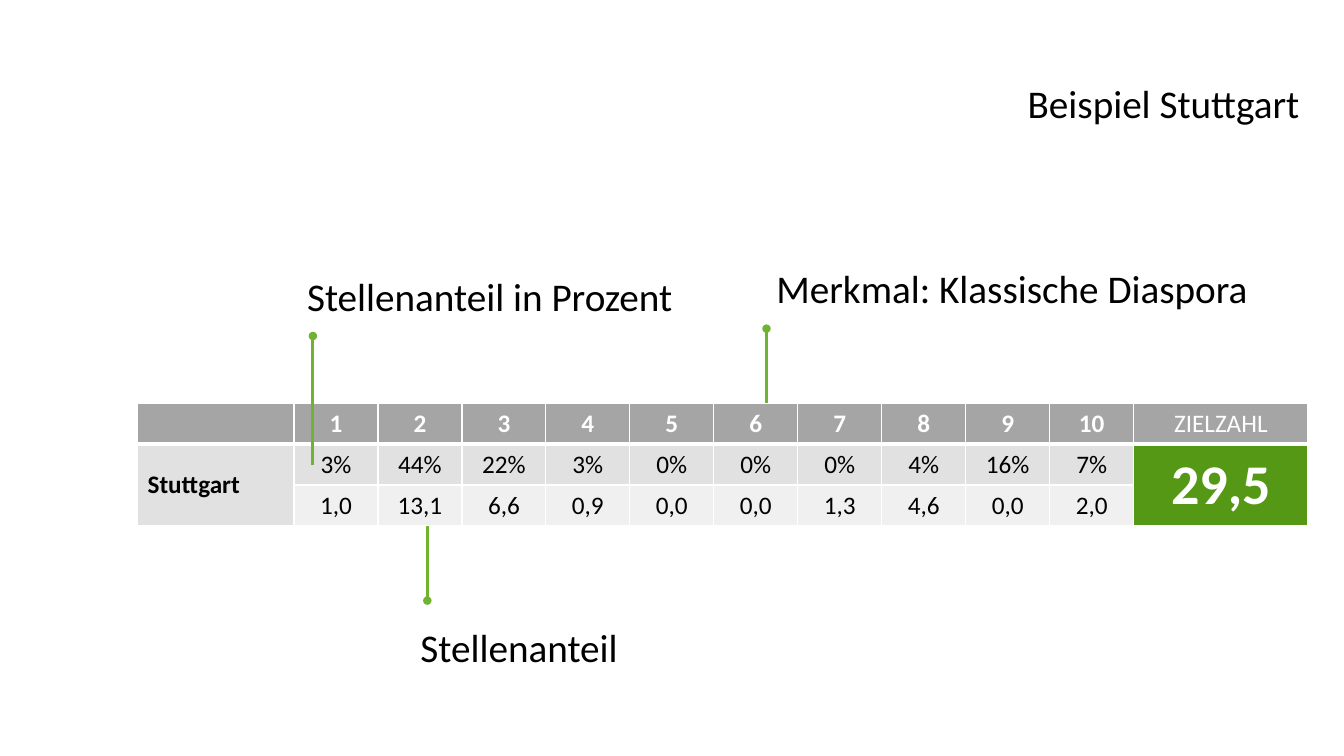
from lxml import etree
from pptx import Presentation
from pptx.dml.color import RGBColor
from pptx.enum.shapes import MSO_CONNECTOR
from pptx.enum.text import MSO_ANCHOR, PP_ALIGN
from pptx.oxml.ns import qn
from pptx.util import Pt

STRAIGHT = MSO_CONNECTOR.STRAIGHT
TOP, MIDDLE = MSO_ANCHOR.TOP, MSO_ANCHOR.MIDDLE
LEFT, CENTER, RIGHT = PP_ALIGN.LEFT, PP_ALIGN.CENTER, PP_ALIGN.RIGHT
TITLE_ONLY = 5
EMU_PER_PX = 9525
COLORS = {
    "text": "000000",
    "white": "FFFFFF",
    "header": "A5A5A5",
    "percent": "E1E1E1",
    "share": "F0F0F0",
    "target": "559815",
    "pointer": "70B231",
}
FEATURES = [str(number) for number in range(1, 11)]
PERCENTS = ["3%", "44%", "22%", "3%", "0%", "0%", "0%", "4%", "16%", "7%"]
SHARES = ["1,0", "13,1", "6,6", "0,9", "0,0", "0,0", "1,3", "4,6", "0,0", "2,0"]
LABELS = [
    ("Stellenanteil", 391, 583, 597),
    ("Stellenanteil in Prozent", 283, 249, 597),
    ("Merkmal: Klassische Diaspora", 730, 241, 538),
]
POINTERS = [(298, 443, 320), (407, 501, 572), (730, 384, 313)]


def px(*lengths):
    """Turn pixel lengths into EMU."""
    return [length * EMU_PER_PX for length in lengths]


def rgb(name):
    """Look up a named colour."""
    return RGBColor.from_string(COLORS[name])


def write(frame, text, size=18, color="text", bold=False, align=LEFT,
          anchor=TOP, spacing=None):
    """Put one formatted paragraph into a text frame."""
    frame.word_wrap = True
    frame.vertical_anchor = anchor
    paragraph = frame.paragraphs[0]
    paragraph.alignment = align
    paragraph.line_spacing = spacing
    run = paragraph.add_run()
    run.text = text
    run.font.name = "Calibri"
    run.font.size = Pt(size)
    run.font.bold = bold
    run.font.color.rgb = rgb(color)


class Slide:
    """Draw the elements of one slide in a shared style."""

    label_style = {"size": 28, "anchor": MIDDLE, "spacing": 0.9}
    label_height = 71

    def __init__(self, deck):
        """Add a slide with a title."""
        self.slide = deck.slides.add_slide(deck.slide_layouts[TITLE_ONLY])
        self.shapes = self.slide.shapes

    def title(self, text, left, top, width):
        """Move and fill the title placeholder."""
        heading = self.shapes.title
        heading.left, heading.top, heading.width, heading.height = px(
            left, top, width, self.label_height)
        write(heading.text_frame, text, align=RIGHT, **self.label_style)

    def label(self, text, left, top, width):
        """Add a text label."""
        box = self.shapes.add_textbox(*px(left, top, width, self.label_height))
        write(box.text_frame, text, **self.label_style)

    def pointer(self, x, start, end):
        """Add a vertical line with a round end."""
        line = self.shapes.add_connector(STRAIGHT, *px(x, start, x, end))
        line.line.color.rgb = rgb("pointer")
        line.line.width = Pt(2)
        etree.SubElement(line.line._get_or_add_ln(), qn("a:tailEnd"), type="oval")
        etree.SubElement(line._element.spPr, qn("a:effectLst"))

    def table(self, left, top, widths, row_height, row_count):
        """Add an unstyled table with the given column widths."""
        frame = self.shapes.add_table(
            row_count, len(widths),
            *px(left, top, sum(widths), row_height * row_count))
        table = frame.table
        table.first_row = table.horz_banding = False
        for column, width in zip(table.columns, px(*widths)):
            column.width = width
        return table

    def cell(self, cell, fill, top_line=1, bottom_line=1, text="", **style):
        """Set the borders, fill and text of a table cell."""
        properties = cell._tc.get_or_add_tcPr()
        lines = {"lnL": 1, "lnR": 1, "lnT": top_line, "lnB": bottom_line}
        for side, points in lines.items():
            border = etree.SubElement(properties, qn(f"a:{side}"), w=str(Pt(points)))
            paint = etree.SubElement(border, qn("a:solidFill"))
            etree.SubElement(paint, qn("a:srgbClr"), val=COLORS["white"])
        cell.fill.solid()
        cell.fill.fore_color.rgb = rgb(fill)
        if text:
            cell.vertical_anchor = style.get("anchor", TOP)
            write(cell.text_frame, text, **style)


def fill_shares(slide):
    """Build the table of job shares."""
    shares = slide.table(131, 384, [149] + [80] * 10 + [166], 39, 3)
    last = len(FEATURES) + 1
    rows = [
        ("header", "header", "header", 1, 3),
        ("percent", "percent", "target", 3, 1),
        ("percent", "share", "target", 1, 1),
    ]
    texts = [
        ["", *FEATURES, "ZIELZAHL"],
        ["Stuttgart", *PERCENTS, "29,5"],
        ["", *SHARES, ""],
    ]
    for column in (0, last):
        shares.cell(1, column).merge(shares.cell(2, column))
    for row, (first_fill, fill, last_fill, top_line, bottom_line) in enumerate(rows):
        fills = [first_fill] + [fill] * len(FEATURES) + [last_fill]
        for column, text in enumerate(texts[row]):
            style = {"align": CENTER}
            if row == 0:
                style.update(color="white", bold=column < last)
            elif column == 0:
                style = {"bold": True, "anchor": MIDDLE}
            elif column == last:
                style.update(size=40, color="white", bold=True, anchor=MIDDLE)
            slide.cell(shares.cell(row, column), fills[column],
                       top_line, bottom_line, text, **style)


def main():
    """Build and save the deck."""
    deck = Presentation()
    deck.slide_width, deck.slide_height = px(1280, 720)
    slide = Slide(deck)
    slide.title("Beispiel Stuttgart", 650, 65, 597)
    fill_shares(slide)
    for label in LABELS:
        slide.label(*label)
    for pointer in POINTERS:
        slide.pointer(*pointer)
    deck.save("out.pptx")


if __name__ == "__main__":
    main()
